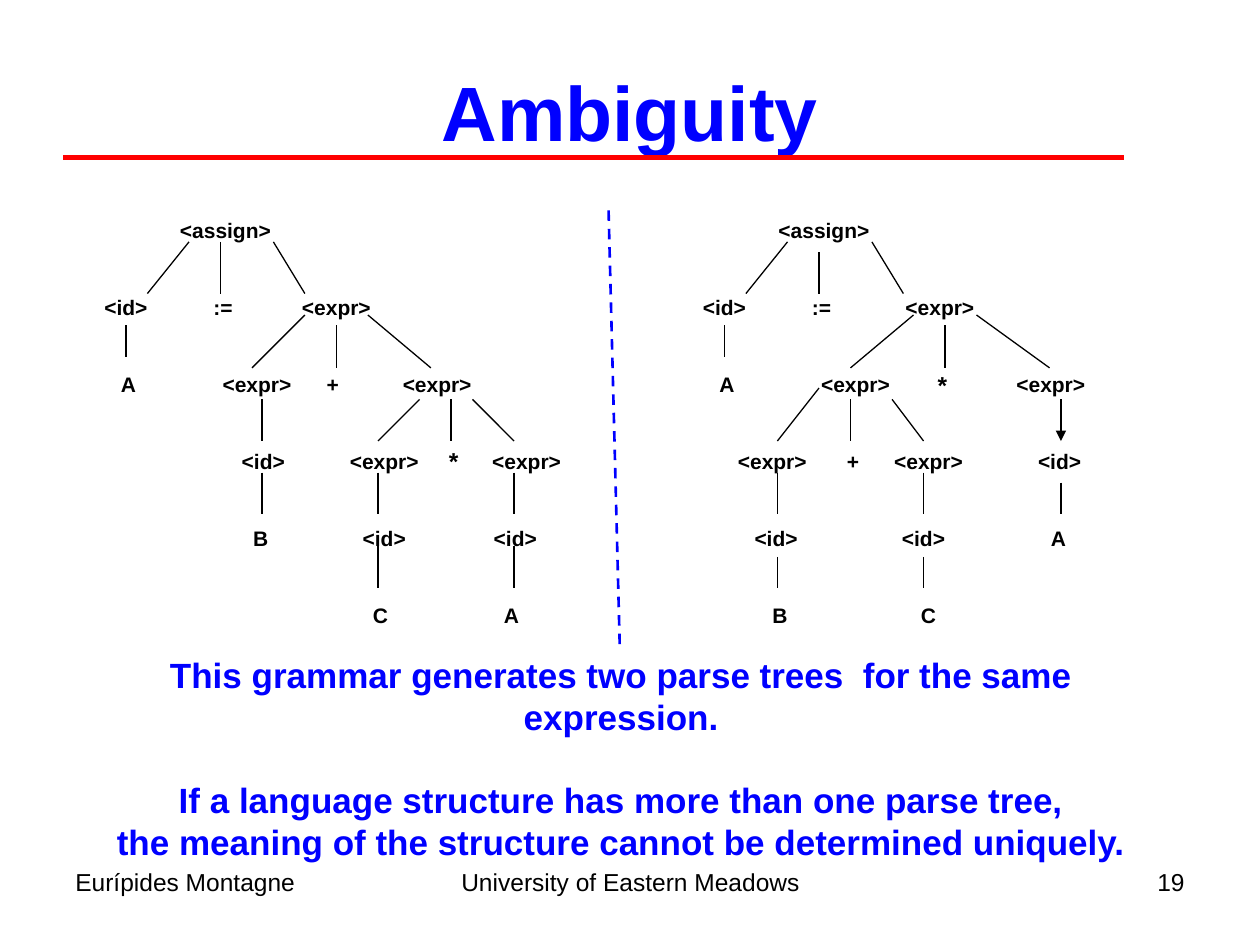
from typing import NamedTuple

from lxml import etree
from pptx import Presentation
from pptx import util as u
from pptx.dml.color import RGBColor
from pptx.enum import dml, shapes, text
from pptx.oxml.ns import qn

COLORS = {"blue": "0000FF", "red": "FF0000", "black": "000000"}
FONT = "Arial"
FIRST_ROW, ROW_GAP = 1.83, 0.61
NODE_WIDTH, NODE_HEIGHT = 0.9, 0.3


class Node(NamedTuple):
    label: str
    x: float
    row: int


class Branch(NamedTuple):
    x1: float
    y1: float
    x2: float
    y2: float
    arrow: bool = False


class Tree(NamedTuple):
    nodes: list[Node]
    branches: list[Branch]


class Footer(NamedTuple):
    words: str
    left: float
    width: float
    align: text.PP_ALIGN


def stem(x: float, top: float, bottom: float, arrow: bool = False) -> Branch:
    return Branch(x, top, x, bottom, arrow)


ADDITION_FIRST = Tree(
    [
        Node("<assign>", 1.79, 0),
        Node("<id>", 1, 1), Node(":=", 1.77, 1), Node("<expr>", 2.67, 1),
        Node("A", 1.02, 2), Node("<expr>", 2.04, 2), Node("+", 2.64, 2), Node("<expr>", 3.47, 2),
        Node("<id>", 2.09, 3), Node("<expr>", 3.05, 3), Node("*", 3.6, 3), Node("<expr>", 4.18, 3),
        Node("B", 2.07, 4), Node("<id>", 3.05, 4), Node("<id>", 4.09, 4),
        Node("C", 3.02, 5), Node("A", 4.06, 5),
    ],
    [
        Branch(1.5, 1.92, 1.17, 2.33), stem(1.75, 1.92, 2.33), Branch(2.17, 1.92, 2.42, 2.33),
        stem(1, 2.58, 2.83),
        Branch(2.42, 2.5, 2, 2.92), stem(2.67, 2.58, 2.92), Branch(2.92, 2.5, 3.42, 2.92),
        stem(2.08, 3.17, 3.5),
        Branch(3.33, 3.17, 3, 3.5), stem(3.58, 3.17, 3.5), Branch(3.75, 3.17, 4.08, 3.5),
        *[stem(x, 3.75, 4.08) for x in (2.08, 3, 4.08)],
        *[stem(x, 4.33, 4.67) for x in (3, 4.08)],
    ],
)

PRODUCT_FIRST = Tree(
    [
        Node("<assign>", 6.54, 0),
        Node("<id>", 5.75, 1), Node(":=", 6.52, 1), Node("<expr>", 7.46, 1),
        Node("A", 5.77, 2), Node("<expr>", 6.79, 2), Node("*", 7.48, 2), Node("<expr>", 8.34, 2),
        Node("<expr>", 6.13, 3), Node("+", 6.77, 3), Node("<expr>", 7.37, 3), Node("<id>", 8.41, 3),
        Node("<id>", 6.16, 4), Node("<id>", 7.33, 4), Node("A", 8.4, 4),
        Node("B", 6.19, 5), Node("C", 7.37, 5),
    ],
    [
        Branch(6.25, 1.92, 5.92, 2.33), stem(6.5, 2, 2.33), Branch(6.92, 1.92, 7.17, 2.33),
        stem(5.75, 2.58, 2.83),
        Branch(7.25, 2.5, 6.75, 2.92), stem(7.5, 2.58, 2.92), Branch(7.75, 2.5, 8.33, 2.92),
        Branch(6.5, 3.08, 6.17, 3.5), stem(6.75, 3.17, 3.5), Branch(7.08, 3.17, 7.33, 3.5),
        stem(8.42, 3.17, 3.5, arrow=True),
        *[stem(x, 3.75, 4.08) for x in (6.17, 7.33)],
        stem(8.42, 3.83, 4.08),
        *[stem(x, 4.42, 4.67) for x in (6.17, 7.33)],
    ],
)

FOOTERS = [
    Footer("Eurípides Montagne", 0.5, 2.33, text.PP_ALIGN.LEFT),
    Footer("University of Eastern Meadows", 3.42, 3.17, text.PP_ALIGN.CENTER),
    Footer("19", 7.17, 2.33, text.PP_ALIGN.RIGHT),
]

CONCLUSIONS = [
    ("This grammar generates two parse trees  for the same expression.", 0),
    ("If a language structure has more than one parse tree,", 23),
    ("the meaning of the structure cannot be determined uniquely.", 0),
]


def write(paragraph, words: str, *, size: float, color: str = "black", bold: bool = False,
          align=text.PP_ALIGN.CENTER, before: float = 0) -> None:
    paragraph.alignment = align
    paragraph.space_before = u.Pt(before)
    run = paragraph.add_run()
    run.text = words
    run.font.name = FONT
    run.font.size = u.Pt(size)
    run.font.bold = bold
    run.font.color.rgb = RGBColor.from_string(COLORS[color])


def add_frame(slide, left: float, top: float, width: float, height: float):
    frame = slide.shapes.add_textbox(*map(u.Inches, (left, top, width, height))).text_frame
    frame.word_wrap = True
    return frame


def draw_line(slide, branch: Branch, color: str = "black", width: float = 0.75,
              dashed: bool = False) -> None:
    ends = map(u.Inches, branch[:4])
    connector = slide.shapes.add_connector(shapes.MSO_CONNECTOR.STRAIGHT, *ends)
    connector.line.color.rgb = RGBColor.from_string(COLORS[color])
    connector.line.width = u.Pt(width)
    if dashed:
        connector.line.dash_style = dml.MSO_LINE.DASH
    properties = connector._element.spPr
    if branch.arrow:
        etree.SubElement(properties.find(qn("a:ln")), qn("a:tailEnd"), type="triangle")
    etree.SubElement(properties, qn("a:effectLst"))


def draw_tree(slide, tree: Tree) -> None:
    for node in tree.nodes:
        middle = FIRST_ROW + ROW_GAP * node.row
        frame = add_frame(slide, node.x - NODE_WIDTH / 2, middle - NODE_HEIGHT / 2,
                          NODE_WIDTH, NODE_HEIGHT)
        frame.margin_left = frame.margin_right = 0
        frame.vertical_anchor = text.MSO_ANCHOR.MIDDLE
        write(frame.paragraphs[0], node.label, size=14 if node.label == "*" else 12, bold=True)
    for branch in tree.branches:
        draw_line(slide, branch)


def main() -> None:
    deck = Presentation()
    deck.slide_width, deck.slide_height = u.Inches(10), u.Inches(7.5)
    slide = deck.slides.add_slide(deck.slide_layouts[5])

    heading = slide.shapes.title
    heading.left, heading.top = u.Inches(0.5), u.Inches(0.25)
    heading.width, heading.height = u.Inches(9), u.Inches(1.25)
    heading.text_frame.vertical_anchor = text.MSO_ANCHOR.MIDDLE
    write(heading.text_frame.paragraphs[0], "Ambiguity", size=44, color="blue", bold=True)
    draw_line(slide, Branch(0.5, 1.25, 8.92, 1.25), color="red", width=3)

    for tree in (ADDITION_FIRST, PRODUCT_FIRST):
        draw_tree(slide, tree)
    draw_line(slide, Branch(4.83, 1.67, 4.92, 5.17), color="blue", width=1.5, dashed=True)

    conclusion = add_frame(slide, 0.53, 5.14, 8.8, 1.75)
    for index, (words, before) in enumerate(CONCLUSIONS):
        paragraph = conclusion.add_paragraph() if index else conclusion.paragraphs[0]
        write(paragraph, words, size=20, color="blue", bold=True, before=before)

    for footer in FOOTERS:
        frame = add_frame(slide, footer.left, 6.83, footer.width, 0.52)
        write(frame.paragraphs[0], footer.words, size=14, align=footer.align)

    deck.save("out.pptx")


if __name__ == "__main__":
    main()
